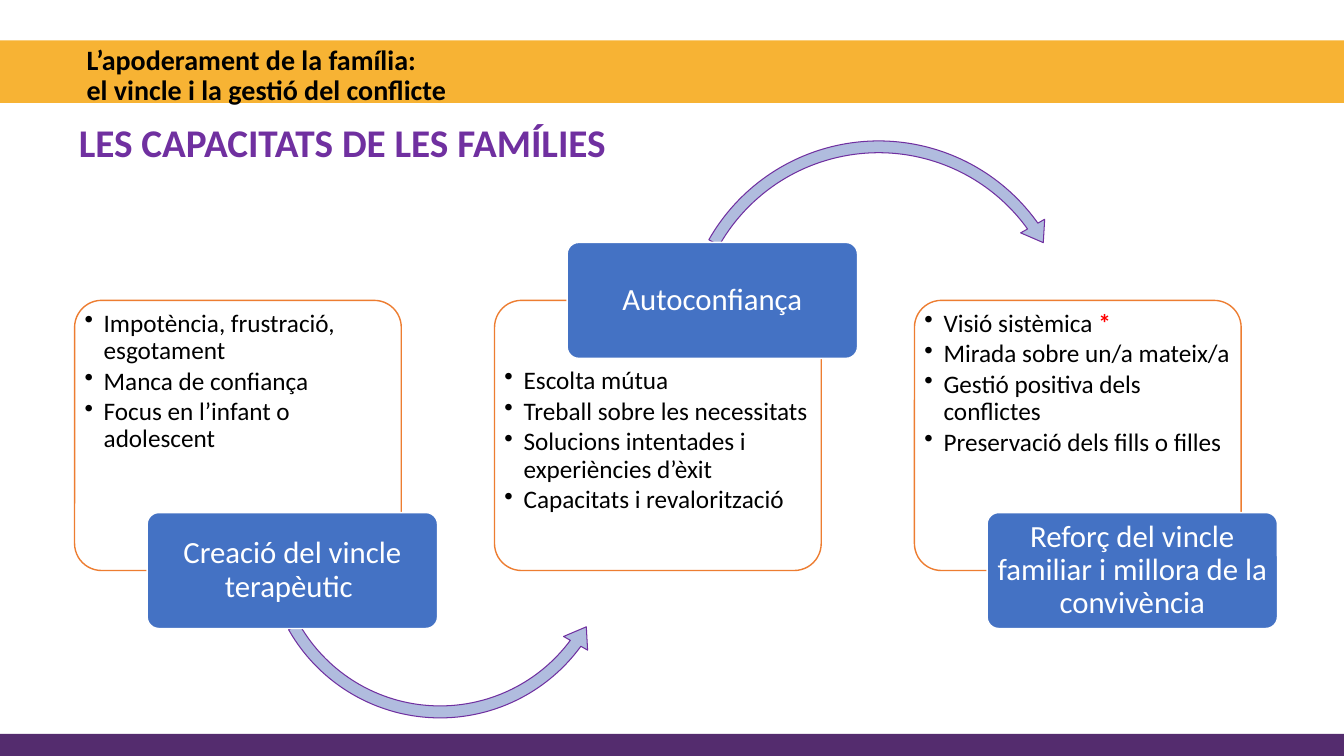
from dataclasses import dataclass

from pptx import Presentation
from pptx.dml.color import RGBColor
from pptx.enum.shapes import MSO_SHAPE
from pptx.enum.text import MSO_ANCHOR, PP_ALIGN
from pptx.oxml.xmlchemy import OxmlElement
from pptx.util import Inches, Pt

RECTANGLE = MSO_SHAPE.RECTANGLE
ROUNDED = MSO_SHAPE.ROUNDED_RECTANGLE
ARC_OVER = MSO_SHAPE.CIRCULAR_ARROW
ARC_UNDER = MSO_SHAPE.LEFT_CIRCULAR_ARROW
TOP, MIDDLE = MSO_ANCHOR.TOP, MSO_ANCHOR.MIDDLE
LEFT, CENTER = PP_ALIGN.LEFT, PP_ALIGN.CENTER


@dataclass(frozen=True)
class Theme:
    font: str = "Calibri"
    black: str = "000000"
    white: str = "FFFFFF"
    gold: str = "F7B334"
    plum: str = "542C6E"
    purple: str = "7030A0"
    orange: str = "ED7D31"
    blue: str = "4472C4"
    pale_blue: str = "B0BCDE"
    red: str = "FF0000"
    title_size: int = 20
    heading_size: int = 28
    caption_size: int = 22
    bullet_size: int = 18


THEME = Theme()

TITLE = ["L’apoderament de la família:", "el vincle i la gestió del conflicte"]
HEADING = "LES CAPACITATS DE LES FAMÍLIES"
MARK = "*"
STAGES = [
    {
        "caption": "Creació del vincle terapèutic ",
        "bullets": [
            ["Impotència, frustració, esgotament"],
            ["Manca de confiança"],
            ["Focus en l’infant o adolescent"],
        ],
    },
    {
        "caption": "Autoconfiança",
        "bullets": [
            ["Escolta mútua"],
            ["Treball sobre les necessitats"],
            ["Solucions intentades i experiències d’èxit"],
            ["Capacitats i revalorització"],
        ],
    },
    {
        "caption": "Reforç del vincle familiar i millora de la convivència",
        "bullets": [
            ["Visió sistèmica ", MARK],
            ["Mirada sobre un/a mateix/a"],
            ["Gestió positiva dels conflictes"],
            ["Preservació dels fills o filles"],
        ],
    },
]
ARROWS = [
    {"kind": ARC_UNDER, "box": (2.56, 3.59, 3.61, 3.61),
     "thickness": 3.3, "angles": (6.7, 36.29, 150.41), "head": 3.8},
    {"kind": ARC_OVER, "box": (6.7, 1.32, 4.03, 4.03),
     "thickness": 2.9, "angles": (5.96, 324.45, 209.59), "head": 3.4},
]

SLIDE_WIDTH, SLIDE_HEIGHT = 13.33, 7.5
FIRST_COLUMN, COLUMN_STEP = 0.74, 4.165
PANEL_TOP, PANEL_WIDTH, PANEL_HEIGHT = 2.98, 3.24, 2.68
CAPTION_SHIFT, CAPTION_WIDTH, CAPTION_HEIGHT = 0.72, 2.88, 1.15
CAPTION_HIGH = PANEL_TOP - CAPTION_HEIGHT / 2
CAPTION_LOW = PANEL_TOP + PANEL_HEIGHT - CAPTION_HEIGHT / 2
DEGREE = 0.6


def color(code):
    return RGBColor.from_string(code)


def add_box(slide, kind, box, fill, line=None, weight=1):
    shape = slide.shapes.add_shape(kind, *map(Inches, box))
    shape.shadow.inherit = False
    shape.fill.solid()
    shape.fill.fore_color.rgb = color(fill)
    if line:
        shape.line.color.rgb = color(line)
        shape.line.width = Pt(weight)
    else:
        shape.line.fill.background()
    if kind == ROUNDED:
        shape.adjustments[0] = 0.1
    return shape


def set_frame(shape, anchor, margins):
    frame = shape.text_frame
    frame.word_wrap = True
    frame.vertical_anchor = anchor
    (frame.margin_left, frame.margin_top,
     frame.margin_right, frame.margin_bottom) = map(Inches, margins)
    return frame


def add_run(paragraph, text, size, code, bold=False):
    run = paragraph.add_run()
    run.text = text
    run.font.name = THEME.font
    run.font.size = Pt(size)
    run.font.bold = bold
    run.font.color.rgb = color(code)


def add_header(slide):
    add_box(slide, RECTANGLE, (0, 0.4, SLIDE_WIDTH, 0.62), THEME.gold)
    add_box(slide, RECTANGLE, (0, 7.28, SLIDE_WIDTH, SLIDE_HEIGHT - 7.28), THEME.plum)
    margins = (0.1, 0.05, 0.1, 0.05)

    title = slide.shapes.add_textbox(*map(Inches, (0.76, 0.4, 7.69, 0.72)))
    paragraph = set_frame(title, MIDDLE, margins).paragraphs[0]
    paragraph.line_spacing = 0.9
    for number, line in enumerate(TITLE):
        if number:
            paragraph.add_line_break()
        add_run(paragraph, line, THEME.title_size, THEME.black, True)

    heading = slide.shapes.add_textbox(*map(Inches, (0.08, 1.12, 6.63, 0.57)))
    paragraph = set_frame(heading, TOP, margins).paragraphs[0]
    paragraph.alignment = CENTER
    add_run(paragraph, HEADING, THEME.heading_size, THEME.purple, True)


def add_bullets(frame, bullets):
    for number, pieces in enumerate(bullets):
        paragraph = frame.add_paragraph() if number else frame.paragraphs[0]
        properties = paragraph._p.get_or_add_pPr()
        properties.set("marL", str(Inches(0.19)))
        properties.set("indent", str(-Inches(0.19)))
        bullet = OxmlElement("a:buChar")
        bullet.set("char", "•")
        properties.append(bullet)
        paragraph.alignment = LEFT
        paragraph.line_spacing = 0.9
        paragraph.space_after = Pt(2.5)
        for text in pieces:
            marked = text == MARK
            add_run(paragraph, text, THEME.bullet_size,
                    THEME.red if marked else THEME.black, marked)


def add_panel(slide, left, bullets, text_top):
    panel = add_box(slide, ROUNDED, (left, PANEL_TOP, PANEL_WIDTH, PANEL_HEIGHT),
                    THEME.white, THEME.orange)
    add_bullets(set_frame(panel, TOP, (0.02, text_top, 0.02, 0.02)), bullets)


def add_arrow(slide, arrow):
    shape = add_box(slide, arrow["kind"], arrow["box"],
                    THEME.pale_blue, THEME.purple, 0.75)
    values = [arrow["thickness"] / 100]
    values += [angle * DEGREE for angle in arrow["angles"]]
    values.append(arrow["head"] / 100)
    for number, value in enumerate(values):
        shape.adjustments[number] = value


def add_caption(slide, left, top, text):
    caption = add_box(slide, ROUNDED, (left, top, CAPTION_WIDTH, CAPTION_HEIGHT),
                      THEME.blue, THEME.white)
    paragraph = set_frame(caption, MIDDLE, (0.05, 0.03, 0.05, 0.03)).paragraphs[0]
    paragraph.alignment = CENTER
    paragraph.line_spacing = 0.9
    add_run(paragraph, text, THEME.caption_size, THEME.white)


def main():
    presentation = Presentation()
    presentation.slide_width = Inches(SLIDE_WIDTH)
    presentation.slide_height = Inches(SLIDE_HEIGHT)
    slide = presentation.slides.add_slide(presentation.slide_layouts[6])
    add_header(slide)
    for number, stage in enumerate(STAGES):
        left = FIRST_COLUMN + number * COLUMN_STEP
        raised = number % 2 == 1
        add_panel(slide, left, stage["bullets"], 0.59 if raised else 0.02)
        if number < len(ARROWS):
            add_arrow(slide, ARROWS[number])
        add_caption(slide, left + CAPTION_SHIFT,
                    CAPTION_HIGH if raised else CAPTION_LOW, stage["caption"])
    presentation.save("out.pptx")


if __name__ == "__main__":
    main()
